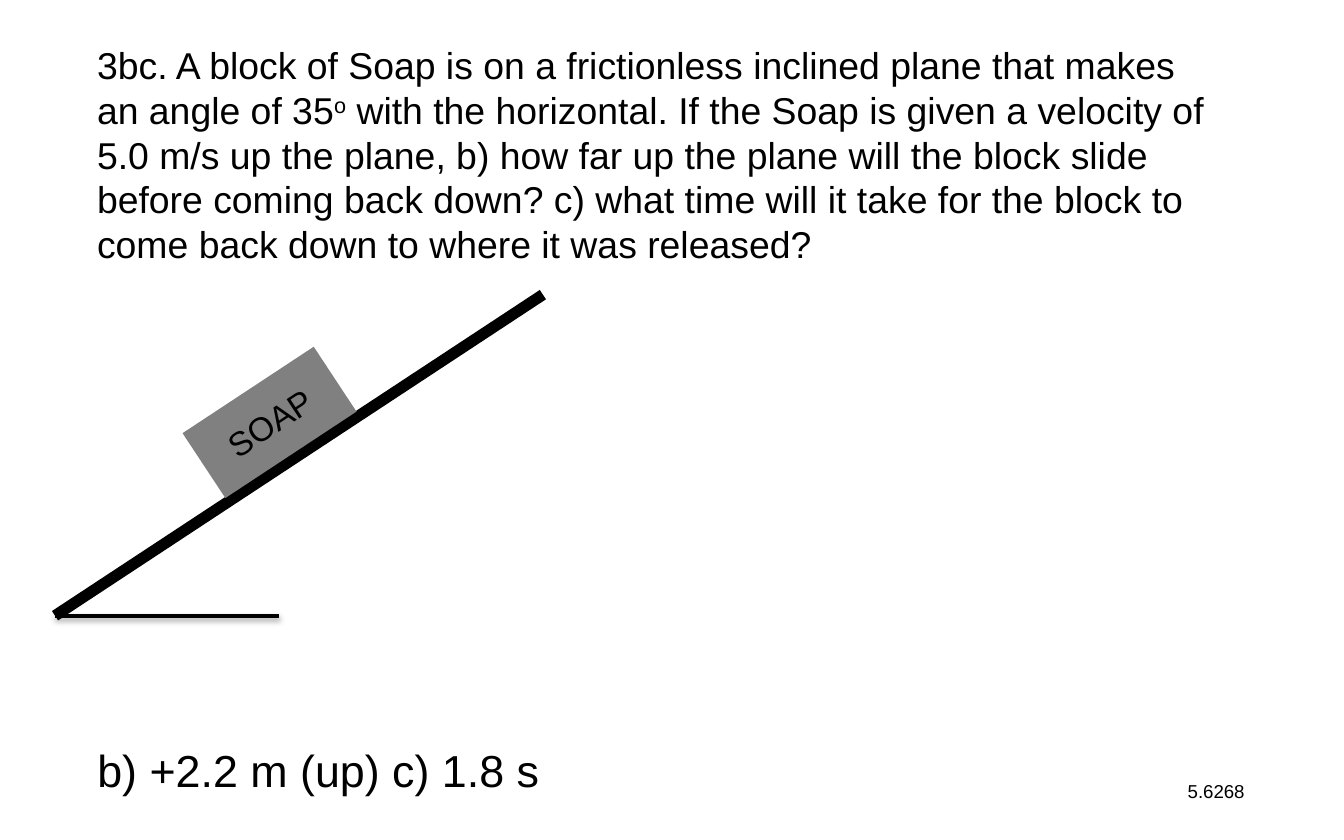
import lxml.etree
import pptx
import pptx.dml.color
import pptx.enum.shapes
import pptx.enum.text
import pptx.oxml.ns
import pptx.util

Cm = pptx.util.Cm
Pt = pptx.util.Pt
ANCHOR = pptx.enum.text.MSO_ANCHOR
ALIGN = pptx.enum.text.PP_ALIGN
NO_AUTOFIT = pptx.enum.text.MSO_AUTO_SIZE.NONE
BLACK = "000000"
GRAY = "808080"


def color(hex_value):
    return pptx.dml.color.RGBColor.from_string(hex_value)


def set_values(target, values):
    for name, value in values.items():
        setattr(target, name, value)


def add_run(paragraph, text, size):
    run = paragraph.add_run()
    run.text = text
    set_values(run.font, {"name": "Arial", "size": Pt(size), "bold": False})
    run.font.color.rgb = color(BLACK)
    return run


def add_line(shapes, start, end, width):
    """Add a black line and return its effect list, which is empty."""
    line = shapes.add_connector(
        pptx.enum.shapes.MSO_CONNECTOR.STRAIGHT,
        *(Cm(length) for length in start + end))
    line.line.color.rgb = color(BLACK)
    line.line.width = Pt(width)
    return lxml.etree.SubElement(
        line._element.spPr, pptx.oxml.ns.qn("a:effectLst"))


def add_soft_shadow(effects):
    shadow = lxml.etree.SubElement(
        effects, pptx.oxml.ns.qn("a:outerShdw"),
        blurRad=str(Pt(3.1)), dist=str(Pt(1.6)), dir="5400000",
        rotWithShape="0")
    shade = lxml.etree.SubElement(
        shadow, pptx.oxml.ns.qn("a:srgbClr"), val=BLACK)
    lxml.etree.SubElement(shade, pptx.oxml.ns.qn("a:alpha"), val="38000")


def place_question(slide, left, top, width, height):
    title = slide.shapes.title
    set_values(title, {"left": Cm(left), "top": Cm(top),
                       "width": Cm(width), "height": Cm(height)})
    set_values(title.text_frame, {
        "word_wrap": True, "auto_size": NO_AUTOFIT,
        "vertical_anchor": ANCHOR.TOP, "margin_right": Cm(0.55)})
    paragraph = title.text_frame.paragraphs[0]
    paragraph.alignment = ALIGN.LEFT
    add_run(paragraph, "3bc. A block of Soap is on a frictionless inclined "
            "plane that makes an angle of 35", 20)
    degree = add_run(paragraph, "o", 20)
    degree._r.get_or_add_rPr().set("baseline", "30000")
    add_run(paragraph, " with the horizontal. If the Soap is given a velocity "
            "of 5.0 m/s up the plane, b) how far up the plane will the block "
            "slide before coming back down? c) what time will it take for the "
            "block to come back down to where it was released?", 20)


def place_incline(slide, left, top, width, height):
    foot = (left, top + height)
    group = slide.shapes.add_group_shape()
    add_line(group.shapes, foot, (left + width, top), 6)

    block = group.shapes.add_shape(
        pptx.enum.shapes.MSO_SHAPE.RECTANGLE,
        Cm(left + 2.57), Cm(top + 1.68), Cm(2.97), Cm(1.47))
    block.rotation = 326.6
    block.shadow.inherit = False
    block.fill.solid()
    block.fill.fore_color.rgb = color(GRAY)
    block.line.fill.background()
    set_values(block.text_frame, {
        "word_wrap": False, "vertical_anchor": ANCHOR.MIDDLE})
    paragraph = block.text_frame.paragraphs[0]
    paragraph.alignment = ALIGN.CENTER
    add_run(paragraph, "SOAP", 18)

    add_soft_shadow(add_line(slide.shapes, foot, (left + 4.24, foot[1]), 2))


def place_answer(slide, left, top, width, height):
    answer = slide.shapes.add_textbox(
        Cm(left), Cm(top), Cm(width), Cm(height))
    answer.text_frame.word_wrap = False
    add_run(answer.text_frame.paragraphs[0], "b) +2.2 m (up) c) 1.8 s", 24)


def place_result_table(slide, left, top, width, height):
    table = slide.shapes.add_table(
        1, 1, Cm(left), Cm(top), Cm(width), Cm(height)).table
    set_values(table, {"first_row": False, "horz_banding": False})
    cell = table.cell(0, 0)
    cell.fill.background()
    set_values(cell, {
        "margin_left": Cm(0.03), "margin_right": Cm(0.03),
        "margin_top": Cm(0.03), "margin_bottom": 0,
        "vertical_anchor": ANCHOR.BOTTOM})
    paragraph = cell.text_frame.paragraphs[0]
    paragraph.alignment = ALIGN.RIGHT
    add_run(paragraph, "5.6268", 10)


def main():
    presentation = pptx.Presentation()
    presentation.slide_width = Cm(25.4)
    presentation.slide_height = Cm(15.88)
    title_only = presentation.slide_layouts[5]
    slide = presentation.slides.add_slide(title_only)
    place_question(slide, 1.58, 0.67, 21.97, 4.52)
    place_answer(slide, 1.59, 13.92, 8.94, 1.27)
    place_result_table(slide, 21.62, 14.7, 1.93, 0.48)
    place_incline(slide, 1.04, 5.57, 9.22, 6.07)
    presentation.save("out.pptx")


if __name__ == "__main__":
    main()
